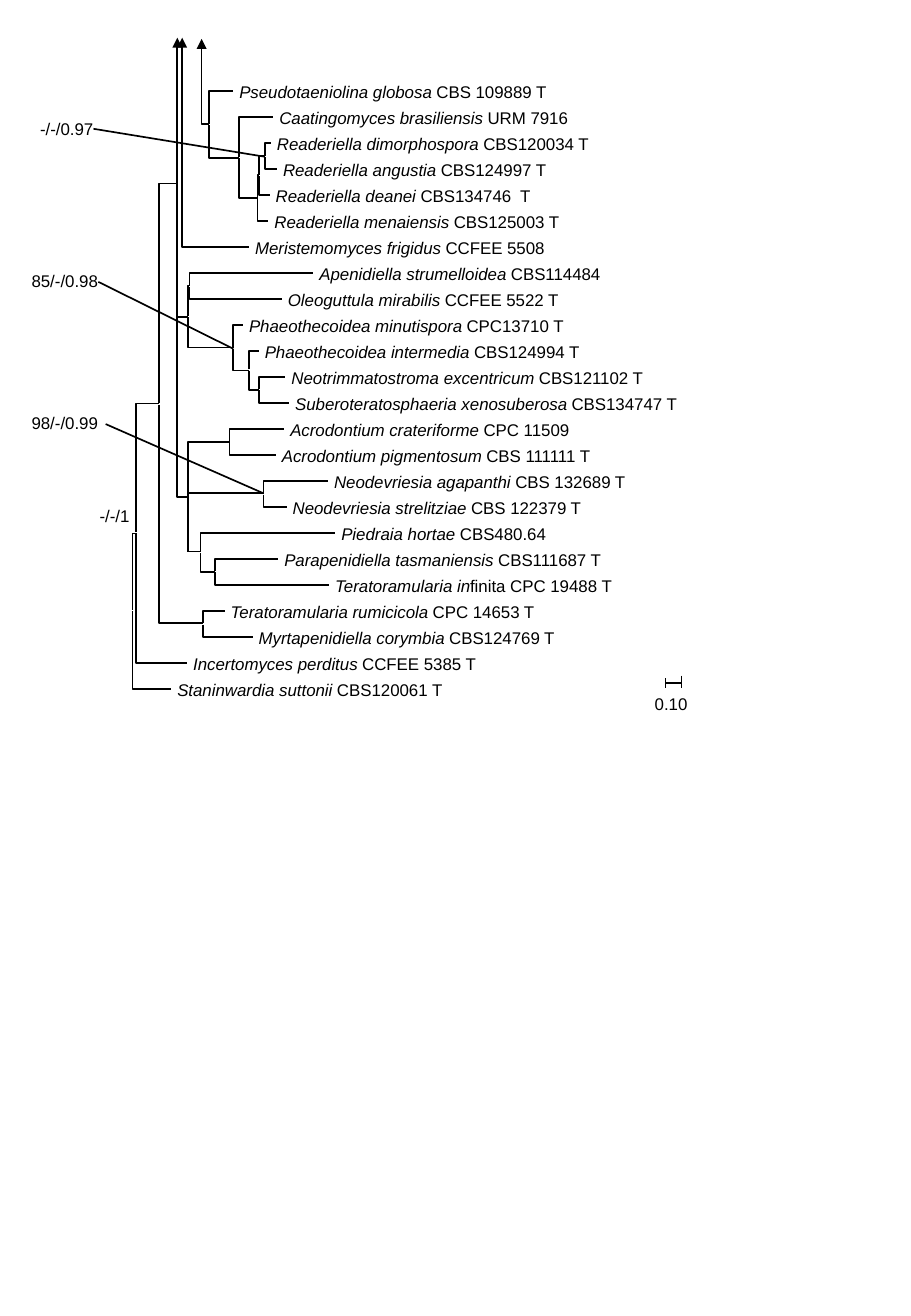
"""Draws a phylogenetic tree of fungal species with support values and a scale bar."""
import pptx
import pptx.util
import pptx.dml.color
import pptx.enum.shapes
import pptx.enum.text
import pptx.oxml

Inches = pptx.util.Inches
INK = "000000"


def paint(color, code):
    color.rgb = pptx.dml.color.RGBColor.from_string(code)


def write(left, top, width, parts):
    box = slide.shapes.add_textbox(Inches(left), Inches(top), Inches(width), Inches(0.17))
    frame = box.text_frame
    frame.margin_left = frame.margin_right = frame.margin_top = frame.margin_bottom = 0
    frame.word_wrap = False
    frame.auto_size = pptx.enum.text.MSO_AUTO_SIZE.SHAPE_TO_FIT_TEXT
    for text, slant in parts:
        run = frame.paragraphs[0].add_run()
        run.text = text
        run.font.name = "Arial"
        run.font.size = pptx.util.Pt(10)
        run.font.italic = slant
        paint(run.font.color, INK)


deck = pptx.Presentation()
deck.slide_width = Inches(7.5)
deck.slide_height = Inches(10.83)
slide = deck.slides.add_slide(deck.slide_layouts[6])

# species, strain, label width, node x, node y, tip x
species = [
    ("Pseudotaeniolina globosa ", "CBS 109889 T", 2.55, 1.72, 1.02, 1.92),
    ("Caatingomyces brasiliensis ", "URM 7916", 2.4, 1.97, 1.29, 2.25),
    ("Readeriella dimorphospora ", "CBS120034 T", 2.59, 2.18, 1.28, 2.23),
    ("Readeriella angustia ", "CBS124997 T", 2.18, 2.18, 1.29, 2.28),
    ("Readeriella deanei ", "CBS134746  T", 2.11, 2.13, 1.45, 2.22),
    ("Readeriella menaiensis ", "CBS125003 T", 2.36, 2.12, 1.63, 2.21),
    ("Meristemomyces frigidus ", "CCFEE 5508", 2.45, 1.5, 0.46, 2.05),
    ("Apenidiella strumelloidea ", "CBS114484", 2.38, 1.56, 2.35, 2.58),
    ("Oleoguttula mirabilis ", "CCFEE 5522 T", 2.25, 1.56, 2.36, 2.32),
    ("Phaeothecoidea minutispora ", "CPC13710 T", 2.61, 1.92, 2.86, 2),
    ("Phaeothecoidea intermedia ", "CBS124994 T", 2.61, 2.05, 3.04, 2.13),
    ("Neotrimmatostroma excentricum ", "CBS121102 T", 2.93, 2.13, 3.2, 2.35),
    ("Suberoteratosphaeria xenosuberosa ", "CBS134747 T", 3.16, 2.13, 3.21, 2.38),
    ("Acrodontium crateriforme ", "CPC 11509", 2.33, 1.89, 3.63, 2.34),
    ("Acrodontium pigmentosum ", "CBS 111111 T", 2.61, 1.89, 3.64, 2.27),
    ("Neodevriesia agapanthi ", "CBS 132689 T", 2.41, 2.17, 4.06, 2.7),
    ("Neodevriesia strelitziae ", "CBS 122379 T", 2.4, 2.17, 4.07, 2.36),
    ("Piedraia hortae ", "CBS480.64", 1.69, 1.65, 4.54, 2.76),
    ("Parapenidiella tasmaniensis ", "CBS111687 T", 2.65, 1.77, 4.7, 2.29),
    ("Teratoramularia in", "finita CPC 19488 T", 2.31, 1.77, 4.71, 2.71),
    ("Teratoramularia rumicicola ", "CPC 14653 T", 2.54, 1.67, 5.13, 1.85),
    ("Myrtapenidiella corymbia ", "CBS124769 T", 2.46, 1.67, 5.14, 2.08),
    ("Incertomyces perditus ", "CCFEE 5385 T", 2.35, 1.12, 4.39, 1.54),
    ("Staninwardia suttonii ", "CBS120061 T", 2.2, 1.09, 5.03, 1.41),
]
forks = [
    (2.13, 1.44, 1.28, 2.18), (2.12, 1.63, 1.44, 2.13), (1.97, 1.3, 1.63, 2.12),
    (1.72, 1.03, 1.3, 1.97), (1.66, 0.41, 1.02, 1.72), (1.55, 2.6, 2.35, 1.56),
    (2.05, 3.05, 3.21, 2.13), (1.92, 2.87, 3.05, 2.05), (1.55, 2.61, 2.86, 1.92),
    (1.46, 0.78, 2.61, 1.55), (1.55, 4.08, 3.64, 1.89), (1.55, 4.3, 4.06, 2.17),
    (1.65, 4.55, 4.71, 1.77), (1.55, 4.31, 4.54, 1.65), (1.46, 1.52, 4.09, 1.55),
    (1.31, 3.32, 1.51, 1.46), (1.31, 3.33, 5.13, 1.67), (1.12, 4.38, 3.32, 1.31),
    (1.09, 5.02, 4.39, 1.12),
]
for row, (name, strain, width, node, start, tip) in enumerate(species):
    level = 0.75 + 0.214 * row
    write(tip + 0.05, level - 0.08, width, [(name, True), (strain, False)])
    forks.append((node, start, level, tip))

for node, start, level, tip in forks:
    pen = slide.shapes.build_freeform(Inches(node), Inches(start))
    pen.add_line_segments(
        [(Inches(node), Inches(level)), (Inches(tip), Inches(level))], close=False)
    branch = pen.convert_to_shape()
    branch.shadow.inherit = False
    branch.fill.background()
    paint(branch.line.color, INK)
    branch.line.width = pptx.util.Pt(1)

for text, left, top, width in [
    ("-/-/0.97", 0.33, 0.98, 0.44), ("85/-/0.98", 0.26, 2.23, 0.55),
    ("98/-/0.99", 0.26, 3.4, 0.55), ("-/-/1", 0.82, 4.16, 0.25),
    ("0.10", 5.39, 5.71, 0.27),
]:
    write(left, top, width, [(text, False)])

stems = [(1.55, 4.09, 1.55, 4.54), (1.46, 0.53, 1.46, 1.51)]
scale = [(5.48, 5.62, 5.61, 5.62), (5.48, 5.58, 5.48, 5.66), (5.61, 5.56, 5.61, 5.66)]
leads = [(2.18, 1.29, 0.77, 1.06), (1.92, 2.87, 0.81, 2.32), (2.17, 4.06, 0.87, 3.49)]
heads = [(1.5, 0.46, 1.5, 0.31), (1.66, 0.41, 1.66, 0.32), (1.46, 0.61, 1.46, 0.31)]
for ends in stems + scale + leads + heads:
    line = slide.shapes.add_connector(
        pptx.enum.shapes.MSO_CONNECTOR.STRAIGHT, *[Inches(value) for value in ends])
    paint(line.line.color, INK)
    line.line.width = pptx.util.Pt(1)
    props = line._element.spPr
    props.append(pptx.oxml.xmlchemy.OxmlElement("a:effectLst"))
    if ends in heads:
        arrow = pptx.oxml.xmlchemy.OxmlElement("a:tailEnd")
        arrow.set("type", "triangle")
        line.line._get_or_add_ln().append(arrow)

deck.save("out.pptx")
